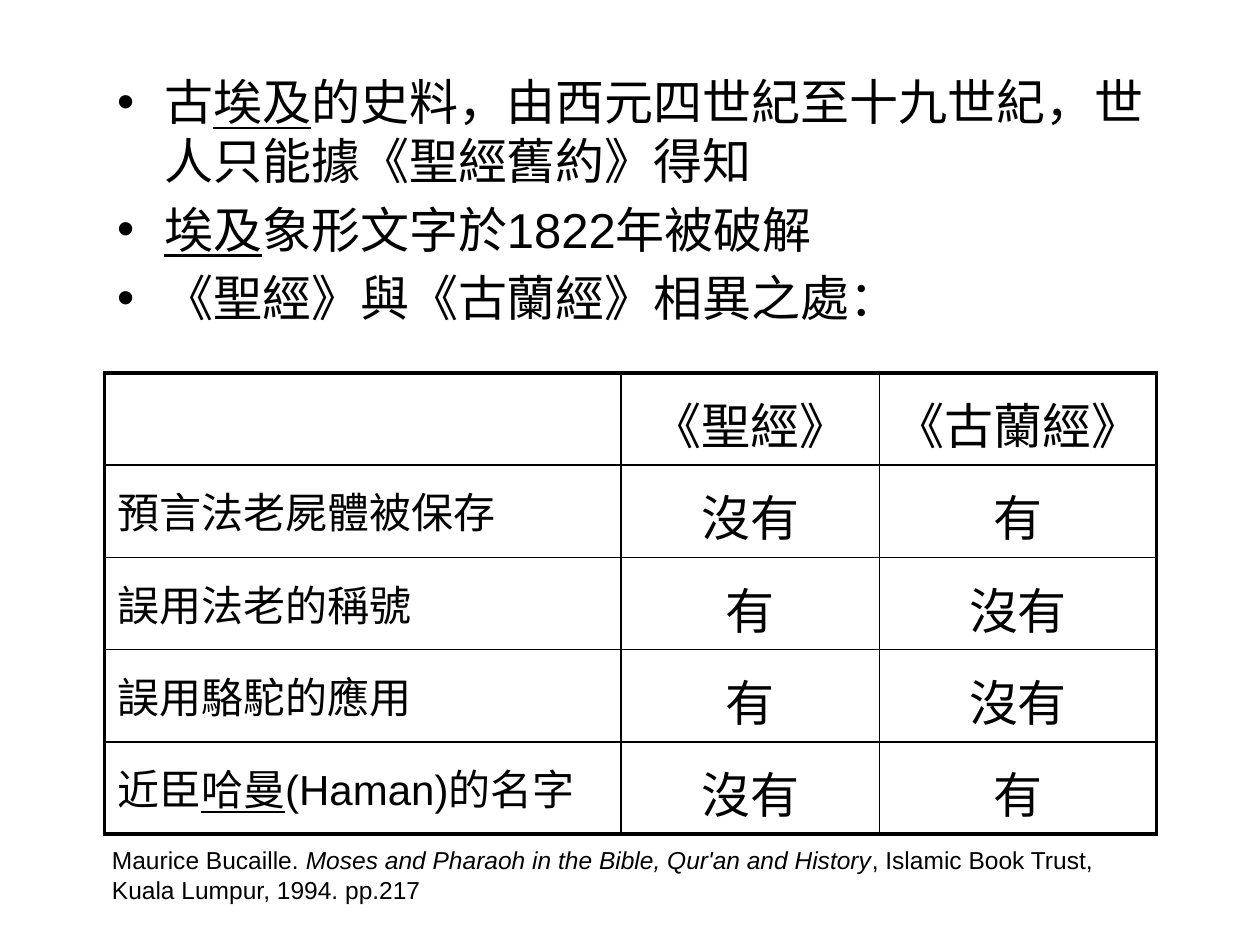
from pptx import Presentation
from pptx.dml.color import RGBColor
from pptx.enum.text import MSO_ANCHOR, MSO_AUTO_SIZE, PP_ALIGN
from pptx.oxml import parse_xml
from pptx.oxml.ns import nsdecls
from pptx.util import Inches, Pt

BLACK = RGBColor(0, 0, 0)
FONT = "Arial"
OUTER_BORDER, INNER_BORDER = Pt(2.25), Pt(1)

# Each paragraph is a list of (text, style) runs
PLAIN, UNDERLINE, ITALIC = "plain", "underline", "italic"
BULLETS = [
    [("古", PLAIN), ("埃及", UNDERLINE),
     ("的史料，由西元四世紀至十九世紀，世人只能據《聖經舊約》得知", PLAIN)],
    [("埃及", UNDERLINE), ("象形文字於1822年被破解", PLAIN)],
    [("《聖經》與《古蘭經》相異之處：", PLAIN)],
]
COLUMN_WIDTHS = [4.1, 2.05, 2.2]
ROW_HEIGHTS = [0.57, 0.71, 0.71, 0.71, 0.63]
COMPARISON = [
    ([], "《聖經》", "《古蘭經》"),
    ([("預言法老屍體被保存", PLAIN)], "沒有", "有"),
    ([("誤用法老的稱號", PLAIN)], "有", "沒有"),
    ([("誤用駱駝的應用", PLAIN)], "有", "沒有"),
    ([("近臣", PLAIN), ("哈曼", UNDERLINE), ("(Haman)的名字", PLAIN)], "沒有", "有"),
]
CITATION = [
    ("Maurice Bucaille. ", PLAIN),
    ("Moses and Pharaoh in the Bible, Qur'an and History", ITALIC),
    (", Islamic Book Trust, Kuala Lumpur, 1994. pp.217", PLAIN),
]


def write_runs(paragraph, runs, size):
    paragraph.font.size = Pt(size)
    for text, style in runs:
        run = paragraph.add_run()
        run.text = text
        run.font.name = FONT
        run.font.size = Pt(size)
        run.font.color.rgb = BLACK
        if style == UNDERLINE:
            run.font.underline = True
        elif style == ITALIC:
            run.font.italic = True


def add_bullets(slide):
    body = slide.placeholders[1]
    body.left, body.top = Inches(0.83), Inches(0.52)
    body.width, body.height = Inches(8.42), Inches(1.65)
    text_frame = body.text_frame
    text_frame.auto_size = MSO_AUTO_SIZE.NONE
    for index, runs in enumerate(BULLETS):
        paragraph = text_frame.add_paragraph() if index else text_frame.paragraphs[0]
        paragraph.space_before = Pt(5.6 if index else 0)
        write_runs(paragraph, runs, 28)


def set_borders(cell, widths):
    """Draw solid borders; widths are given as left, right, top, bottom."""
    properties = cell._tc.get_or_add_tcPr()
    for index, (side, width) in enumerate(zip("LRTB", widths)):
        properties.insert(index, parse_xml(
            f'<a:ln{side} {nsdecls("a")} w="{width}"><a:solidFill>'
            f'<a:srgbClr val="{BLACK}"/></a:solidFill></a:ln{side}>'))


def add_comparison_table(slide):
    row_count, column_count = len(ROW_HEIGHTS), len(COLUMN_WIDTHS)
    table = slide.shapes.add_table(
        row_count, column_count, Inches(0.83), Inches(2.96),
        Inches(sum(COLUMN_WIDTHS)), Inches(sum(ROW_HEIGHTS))).table
    table.first_row = table.horz_banding = False
    for column, width in zip(table.columns, COLUMN_WIDTHS):
        column.width = Inches(width)
    for row, height in zip(table.rows, ROW_HEIGHTS):
        row.height = Inches(height)

    for row_index, (label, *answers) in enumerate(COMPARISON):
        contents = [label] + [[(answer, PLAIN)] for answer in answers]
        for column_index, runs in enumerate(contents):
            cell = table.cell(row_index, column_index)
            cell.fill.background()
            cell.margin_top = Inches(0.12)
            paragraph = cell.text_frame.paragraphs[0]
            if column_index:
                paragraph.alignment = PP_ALIGN.CENTER
            write_runs(paragraph, runs, 28 if column_index else 24)
            # The table's outline is thicker than its inner grid
            at_edge = (column_index == 0, column_index == column_count - 1,
                       row_index == 0, row_index == row_count - 1)
            set_borders(cell, [OUTER_BORDER if edge else INNER_BORDER for edge in at_edge])


def add_citation(slide):
    box = slide.shapes.add_textbox(Inches(0.79), Inches(6.66), Inches(8.43), Inches(0.57))
    text_frame = box.text_frame
    text_frame.word_wrap = True
    text_frame.auto_size = MSO_AUTO_SIZE.SHAPE_TO_FIT_TEXT
    text_frame.vertical_anchor = MSO_ANCHOR.TOP
    write_runs(text_frame.paragraphs[0], CITATION, 14)


def main():
    presentation = Presentation()
    presentation.slide_width, presentation.slide_height = Inches(10), Inches(7.5)
    slide = presentation.slides.add_slide(presentation.slide_layouts[1])

    # This slide has no title
    title = slide.shapes.title.element
    title.getparent().remove(title)

    add_bullets(slide)
    add_comparison_table(slide)
    add_citation(slide)
    presentation.save("out.pptx")


if __name__ == "__main__":
    main()
